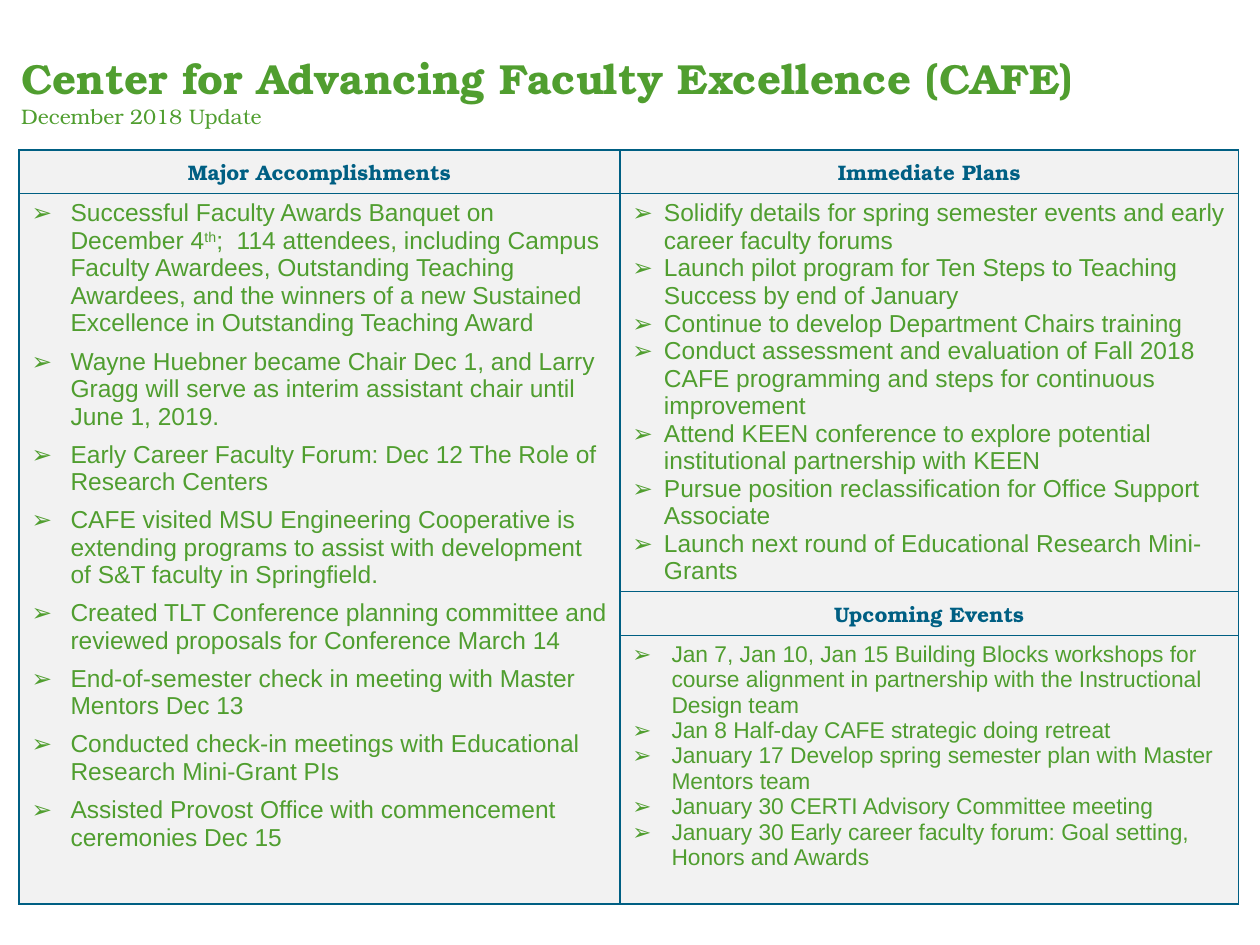
from dataclasses import dataclass

from pptx import Presentation
from pptx.dml.color import RGBColor
from pptx.enum.text import MSO_ANCHOR as Anchor, PP_ALIGN as Align
from pptx.oxml.ns import qn
from pptx.util import Inches, Pt
from lxml.etree import SubElement

COLORS = {"green": "509E2F", "blue": "005F83", "panel": "F2F2F2"}
SERIF, SANS = "TeX Gyre Bonum", "Arial"
TITLE = {"name": SERIF, "size": Pt(24), "bold": True}
SUBTITLE = {"name": SERIF, "size": Pt(12), "bold": False}
HEADING = {"name": SERIF, "size": Pt(12), "bold": True}


@dataclass
class Heading:
    row: int
    col: int
    text: str


@dataclass
class BulletList:
    row: int
    col: int
    size: int
    indent: float
    gap: int
    anchor: Anchor
    items: list[str]


# "^" marks the start and end of superscript text
HEADINGS = [
    Heading(0, 0, "Major Accomplishments"),
    Heading(0, 1, "Immediate Plans"),
    Heading(2, 1, "Upcoming Events"),
]
LISTS = [
    BulletList(1, 0, 14, 0.31, 6, Anchor.TOP, [
        "Successful Faculty Awards Banquet on December 4^th^;  114 attendees, "
        "including Campus Faculty Awardees, Outstanding Teaching Awardees, and the "
        "winners of a new Sustained Excellence in Outstanding Teaching Award",
        "Wayne Huebner became Chair Dec 1, and Larry Gragg will serve as interim "
        "assistant chair until June 1, 2019.",
        "Early Career Faculty Forum: Dec 12 The Role of Research Centers",
        "CAFE visited MSU Engineering Cooperative is extending programs to assist "
        "with development of S&T faculty in Springfield.",
        "Created TLT Conference planning committee and reviewed proposals for "
        "Conference March 14",
        "End-of-semester check in meeting with Master Mentors Dec 13",
        "Conducted check-in meetings with Educational Research Mini-Grant PIs",
        "Assisted Provost Office with commencement ceremonies Dec 15",
    ]),
    BulletList(1, 1, 14, 0.25, 0, Anchor.MIDDLE, [
        "Solidify details for spring semester events and early career faculty forums",
        "Launch pilot program for Ten Steps to Teaching Success by end of January",
        "Continue to develop Department Chairs training",
        "Conduct assessment and evaluation of Fall 2018 CAFE programming and steps "
        "for continuous improvement",
        "Attend KEEN conference to explore potential institutional partnership with KEEN",
        "Pursue position reclassification for Office Support Associate",
        "Launch next round of Educational Research Mini-Grants",
    ]),
    BulletList(3, 1, 13, 0.31, 0, Anchor.TOP, [
        "Jan 7, Jan 10, Jan 15 Building Blocks workshops for course alignment in "
        "partnership with the Instructional Design team",
        "Jan 8 Half-day CAFE strategic doing retreat",
        "January 17 Develop spring semester plan with Master Mentors team",
        "January 30 CERTI Advisory Committee meeting",
        "January 30 Early career faculty forum: Goal setting, Honors and Awards",
    ]),
]
COL_WIDTHS = [4.77, 4.91]
ROW_HEIGHTS = [0.34, 3.16, 0.35, 2.13]


def add_run(p, text: str, color: str, fmt: dict):
    r = p.add_run()
    r.text = text
    for name, value in fmt.items():
        setattr(r.font, name, value)
    r.font.color.rgb = RGBColor.from_string(COLORS[color])
    return r


def paragraph(tf, index: int):
    return tf.paragraphs[0] if index == 0 else tf.add_paragraph()


def add_bullet(p, indent: float) -> None:
    pPr = p._p.get_or_add_pPr()
    pPr.set("marL", str(Inches(indent)))
    pPr.set("indent", str(-Inches(indent)))
    clr = SubElement(pPr, qn("a:buClr"))
    SubElement(clr, qn("a:srgbClr"), val=COLORS["green"])
    SubElement(pPr, qn("a:buFont"), typeface=SANS)
    SubElement(pPr, qn("a:buChar"), char="➢")


def style_cell(cell) -> None:
    tcPr = cell._tc.get_or_add_tcPr()
    for side in ("lnL", "lnR", "lnT", "lnB"):
        ln = SubElement(tcPr, qn(f"a:{side}"), w=str(Pt(1)))
        fill = SubElement(ln, qn("a:solidFill"))
        SubElement(fill, qn("a:srgbClr"), val=COLORS["blue"])
    cell.fill.solid()
    cell.fill.fore_color.rgb = RGBColor.from_string(COLORS["panel"])


def fill_heading(table, heading: Heading) -> None:
    cell = table.cell(heading.row, heading.col)
    cell.vertical_anchor = Anchor.MIDDLE
    p = cell.text_frame.paragraphs[0]
    p.alignment = Align.CENTER
    add_run(p, heading.text, "blue", HEADING)


def fill_list(table, block: BulletList) -> None:
    cell = table.cell(block.row, block.col)
    cell.vertical_anchor = block.anchor
    fmt = {"name": SANS, "size": Pt(block.size), "bold": False}
    for i, item in enumerate(block.items):
        p = paragraph(cell.text_frame, i)
        add_bullet(p, block.indent)
        p.space_before = Pt(block.gap if i else 0)
        for j, part in enumerate(item.split("^")):
            r = add_run(p, part, "green", fmt)
            if j % 2:
                r._r.get_or_add_rPr().set("baseline", "30000")


def main() -> None:
    prs = Presentation()
    prs.slide_width, prs.slide_height = Inches(10), Inches(7.5)
    s = prs.slides.add_slide(prs.slide_layouts[6])

    # Update table
    table = s.shapes.add_table(
        len(ROW_HEIGHTS), len(COL_WIDTHS), Inches(0.15), Inches(1.19),
        Inches(sum(COL_WIDTHS)), Inches(sum(ROW_HEIGHTS))).table
    table.first_row = table.horz_banding = False
    for col, width in zip(table.columns, COL_WIDTHS):
        col.width = Inches(width)
    for row, height in zip(table.rows, ROW_HEIGHTS):
        row.height = Inches(height)
    for cell in table.iter_cells():
        style_cell(cell)
    table.cell(1, 0).merge(table.cell(3, 0))
    for heading in HEADINGS:
        fill_heading(table, heading)
    for block in LISTS:
        fill_list(table, block)

    # Title and date
    tf = s.shapes.add_textbox(Inches(0.07), Inches(0.37), Inches(9.83), Inches(0.71)).text_frame
    tf.word_wrap = True
    lines = [("Center for Advancing Faculty Excellence (CAFE)", TITLE),
             ("December 2018 Update", SUBTITLE)]
    for i, (text, fmt) in enumerate(lines):
        add_run(paragraph(tf, i), text, "green", fmt)

    prs.save("out.pptx")


if __name__ == "__main__":
    main()
